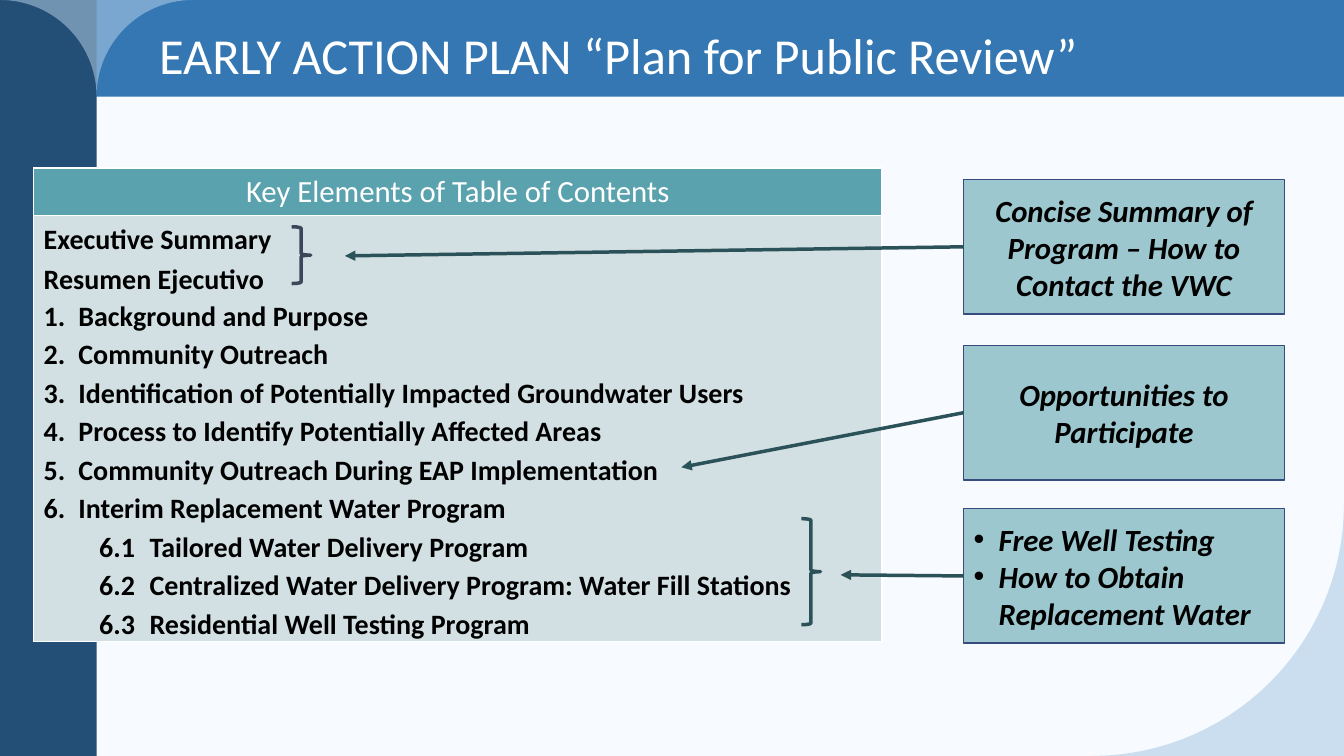
import math
from dataclasses import dataclass
from typing import Optional

from lxml import etree
from pptx import Presentation
from pptx import util as u
from pptx.dml.color import RGBColor
from pptx.enum import shapes, text
from pptx.oxml.ns import qn

FONT = "Calibri"
WHITE = RGBColor(0xFF, 0xFF, 0xFF)
BLACK = RGBColor(0x00, 0x00, 0x00)
PAGE = RGBColor(0xF7, 0xFA, 0xFE)
BANNER = RGBColor(0x34, 0x77, 0xB2)
SIDEBAR = RGBColor(0x23, 0x4F, 0x77)
TOP_CURVE = RGBColor(0xC0, 0xD8, 0xED)
CORNER = RGBColor(0xA1, 0xC4, 0xE3)
HEADER = RGBColor(0x5A, 0xA2, 0xAE)
BODY = RGBColor(0xD2, 0xE0, 0xE3)
NOTE = RGBColor(0x9C, 0xC7, 0xCE)
NOTE_LINE = RGBColor(0x37, 0x4B, 0x7F)
TEAL = RGBColor(0x2B, 0x52, 0x59)
SLATE = RGBColor(0x3B, 0x47, 0x59)

WIDTH, HEIGHT, BAND = 960, 540, 69
NOTE_LEFT, NOTE_WIDTH, NOTE_HEIGHT = 688.3, 229, 96


@dataclass
class Callout:
    top: float
    lines: list[str]
    tip: tuple[float, float]
    bulleted: bool = False


@dataclass
class Brace:
    left: float
    top: float
    height: float
    color: RGBColor


@dataclass
class Entry:
    wording: str
    left: float = 0
    hanging: float = 0
    spacing: Optional[float] = None
    after: float = 3


CALLOUTS = [
    Callout(128.3, ["Concise Summary of Program – How to Contact the VWC"], (246.4, 182.8)),
    Callout(246.8, ["Opportunities to Participate"], (486.7, 333.8)),
    Callout(363.4, ["Free Well Testing", "How to Obtain Replacement Water"], (600.5, 410.6), True),
]
BRACES = [Brace(572.4, 370.5, 75.8, TEAL), Brace(208.3, 162, 40.6, SLATE)]
FRONT_MATTER = ["Executive Summary", "Resumen Ejecutivo"]
CHAPTERS = [
    "Background and Purpose",
    "Community Outreach",
    "Identification of Potentially Impacted Groundwater Users",
    "Process to Identify Potentially Affected Areas",
    "Community Outreach During EAP Implementation",
    "Interim Replacement Water Program",
]
SECTIONS = [
    "Tailored Water Delivery Program",
    "Centralized Water Delivery Program: Water Fill Stations",
    "Residential Well Testing Program",
]


def write(para, wording: str, *, size: float, color: RGBColor, bold: bool = False,
          italic: bool = False, align=None, left: float = 0, hanging: float = 0,
          bullet: str = "", spacing: Optional[float] = None, after: float = 0) -> None:
    props = para._p.get_or_add_pPr()
    if hanging:
        props.set("marL", str(u.Pt(left)))
        props.set("indent", str(-u.Pt(hanging)))
        if bullet:
            etree.SubElement(props, qn("a:buFont"), typeface="Arial")
            etree.SubElement(props, qn("a:buChar"), char=bullet)
        else:
            tabs = etree.SubElement(props, qn("a:tabLst"))
            etree.SubElement(tabs, qn("a:tab"), pos=str(u.Pt(left)), algn="l")
    para.alignment = align
    para.line_spacing = spacing
    para.space_after = u.Pt(after)
    span = para.add_run()
    span.text = wording
    span.font.name, span.font.size = FONT, u.Pt(size)
    span.font.bold, span.font.italic = bold, italic
    span.font.color.rgb = color


def paragraphs(frame, count: int) -> list:
    """Return the frame's first paragraph and enough new ones to make count."""
    return [frame.paragraphs[0]] + [frame.add_paragraph() for _ in range(count - 1)]


def add_box(page, kind, left: float, top: float, width: float, height: float,
            fill: Optional[RGBColor] = None, line: Optional[RGBColor] = None,
            weight: float = 1):
    box = page.shapes.add_shape(kind, u.Pt(left), u.Pt(top), u.Pt(width), u.Pt(height))
    box.shadow.inherit = False
    if fill is None:
        box.fill.background()
    else:
        box.fill.solid()
        box.fill.fore_color.rgb = fill
    if line is None:
        box.line.fill.background()
    else:
        box.line.color.rgb = line
        box.line.width = u.Pt(weight)
    return box


def arc(x: float, y: float, radius: float, start: int, end: int) -> list[tuple[float, float]]:
    """Return points on a quarter circle; degrees run clockwise from the right."""
    angles = [math.radians(start + (end - start) * step / 30) for step in range(31)]
    return [(x + radius * math.cos(a), y + radius * math.sin(a)) for a in angles]


def add_translucent_outline(page, points: list[tuple[float, float]], color: RGBColor) -> None:
    emu = [(u.Pt(x), u.Pt(y)) for x, y in points]
    builder = page.shapes.build_freeform(*emu[0])
    builder.add_line_segments(emu[1:], close=True)
    outline = builder.convert_to_shape()
    outline.shadow.inherit = False
    outline.line.fill.background()
    outline.fill.solid()
    outline.fill.fore_color.rgb = color
    tint = outline._element.spPr.find(qn("a:solidFill"))[0]
    etree.SubElement(tint, qn("a:alpha"), val="50000")


def add_background(page) -> None:
    page.background.fill.solid()
    page.background.fill.fore_color.rgb = PAGE
    rectangle = shapes.MSO_SHAPE.RECTANGLE
    add_box(page, rectangle, 0, 0, WIDTH, BAND, BANNER)
    add_box(page, rectangle, 0, 0, BAND, HEIGHT, SIDEBAR)
    top = arc(2 * BAND, BAND, BAND, 270, 180) + arc(0, BAND, BAND, 360, 270)
    add_translucent_outline(page, top, TOP_CURVE)
    corner = arc(WIDTH - 180, HEIGHT - 180, 180, 0, 90) + [(WIDTH, HEIGHT)]
    add_translucent_outline(page, corner, CORNER)


def style_cell(cell, fill: RGBColor) -> None:
    """Fill the cell and give it thin white borders."""
    props = cell._tc.get_or_add_tcPr()
    for side in ("lnL", "lnR", "lnT", "lnB"):
        border = etree.SubElement(props, qn(f"a:{side}"), w=str(u.Pt(1)))
        solid = etree.SubElement(border, qn("a:solidFill"))
        etree.SubElement(solid, qn("a:srgbClr"), val=str(WHITE))
    cell.fill.solid()
    cell.fill.fore_color.rgb = fill


def add_contents(page) -> None:
    entries = [Entry(name, spacing=1.07, after=2) for name in FRONT_MATTER]
    entries += [Entry(f"{n}.\t{name}", 24.8, 24.8) for n, name in enumerate(CHAPTERS, 1)]
    entries += [Entry(f"6.{n}\t{name}", 75.6, 36) for n, name in enumerate(SECTIONS, 1)]
    table = page.shapes.add_table(2, 1, u.Pt(24), u.Pt(120), u.Pt(606), u.Pt(336)).table
    table.rows[0].height, table.rows[1].height = u.Pt(33.8), u.Pt(302.4)
    header, body = table.cell(0, 0), table.cell(1, 0)
    style_cell(header, HEADER)
    style_cell(body, BODY)
    body.margin_bottom = 0
    write(header.text_frame.paragraphs[0], "Key Elements of Table of Contents",
          size=22, color=WHITE, align=text.PP_ALIGN.CENTER)
    for para, entry in zip(paragraphs(body.text_frame, len(entries)), entries):
        write(para, entry.wording, size=20, color=BLACK, bold=True, left=entry.left,
              hanging=entry.hanging, spacing=entry.spacing, after=entry.after)


def add_callout(page, callout: Callout) -> None:
    box = add_box(page, shapes.MSO_SHAPE.RECTANGLE, NOTE_LEFT, callout.top,
                  NOTE_WIDTH, NOTE_HEIGHT, NOTE, NOTE_LINE)
    box.text_frame.word_wrap = True
    box.text_frame.vertical_anchor = text.MSO_ANCHOR.MIDDLE
    layout = (dict(align=text.PP_ALIGN.LEFT, left=18, hanging=18, bullet="•")
              if callout.bulleted else dict(align=text.PP_ALIGN.CENTER))
    for para, wording in zip(paragraphs(box.text_frame, len(callout.lines)), callout.lines):
        write(para, wording, size=22, color=BLACK, bold=True, italic=True, **layout)

    x, y = callout.tip
    arrow = page.shapes.add_connector(
        shapes.MSO_CONNECTOR.STRAIGHT, u.Pt(NOTE_LEFT),
        u.Pt(callout.top + NOTE_HEIGHT / 2), u.Pt(x), u.Pt(y))
    arrow.begin_connect(box, 1)
    arrow.line.color.rgb = TEAL
    arrow.line.width = u.Pt(2.5)
    etree.SubElement(arrow.line._get_or_add_ln(), qn("a:tailEnd"), type="triangle")
    etree.SubElement(arrow._element.spPr, qn("a:effectLst"))


def add_title(page) -> None:
    box = page.shapes.add_textbox(u.Pt(106.6), u.Pt(10.8), u.Pt(674.6), u.Pt(61.2))
    box.text_frame.word_wrap = True
    box.text_frame.vertical_anchor = text.MSO_ANCHOR.MIDDLE
    write(box.text_frame.paragraphs[0], "EARLY ACTION PLAN “Plan for Public Review”",
          size=36, color=WHITE, spacing=0.9)


def main() -> None:
    deck = Presentation()
    deck.slide_width, deck.slide_height = u.Pt(WIDTH), u.Pt(HEIGHT)
    page = deck.slides.add_slide(deck.slide_layouts[6])
    add_background(page)
    add_contents(page)
    for callout in CALLOUTS:
        add_callout(page, callout)
    for brace in BRACES:
        add_box(page, shapes.MSO_SHAPE.RIGHT_BRACE, brace.left, brace.top, 13.7,
                brace.height, line=brace.color, weight=2.5)
    add_title(page)
    deck.save("out.pptx")


if __name__ == "__main__":
    main()
